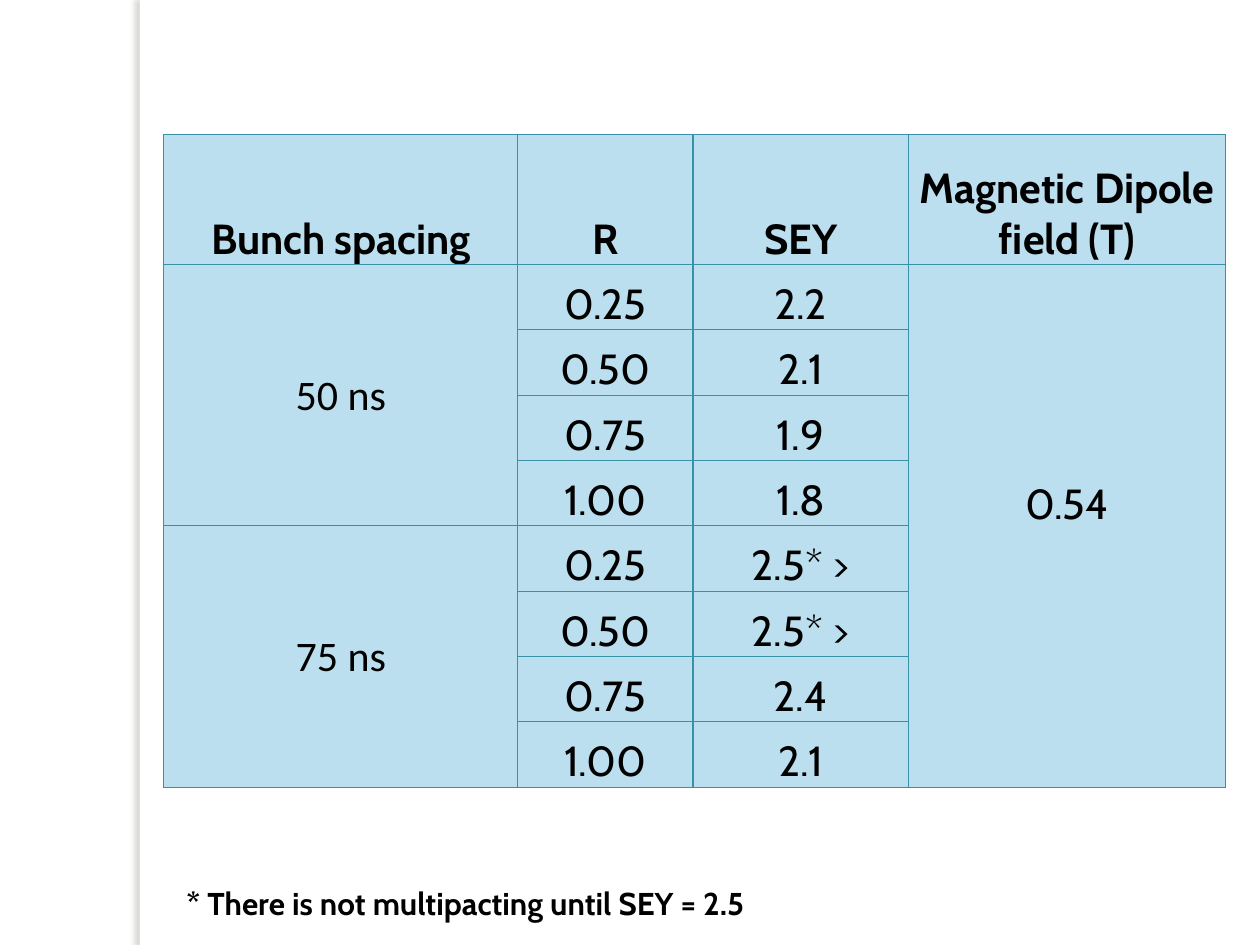
from lxml.etree import SubElement
from pptx import Presentation
from pptx.dml.color import RGBColor
from pptx.enum.shapes import MSO_SHAPE
from pptx.enum.text import MSO_ANCHOR, PP_ALIGN
from pptx.oxml.ns import qn
from pptx.util import Inches, Pt

COLORS = {"paper": "FFFFFF", "shade": "736F63", "cell": "BCDFEF",
          "border": "3891A7", "text": "000000"}
HEADERS = ["Bunch spacing", "R", "SEY", "Magnetic Dipole field (T)"]
RATIOS = ["0.25", "0.50", "0.75", "1.00"]
SEY_BY_SPACING = {"50 ns": ["2.2", "2.1", "1.9", "1.8"],
                  "75 ns": ["2.5* >", "2.5* >", "2.4", "2.1"]}
FIELD = "0.54"
COLUMN_WIDTHS = [2.81, 1.39, 1.71, 2.52]
HEADER_HEIGHT = 1.03


def rgb(name):
    return RGBColor.from_string(COLORS[name])


def style(paragraph, size, bold=False, family="Cabin"):
    font = paragraph.font
    font.name, font.size, font.bold = family, Pt(size), bold
    font.color.rgb = rgb("text")


def add_margin_edge(slide, left, top, width, height):
    """White strip that throws a soft shadow to its left."""
    edge = slide.shapes.add_shape(MSO_SHAPE.RECTANGLE, Inches(left), Inches(top),
                                  Inches(width), Inches(height))
    edge.shadow.inherit = False
    edge.fill.solid()
    edge.fill.fore_color.rgb = rgb("paper")
    edge.line.fill.background()
    effects = edge._element.spPr.find(qn("a:effectLst"))
    shadow = SubElement(effects, qn("a:outerShdw"), blurRad=str(Pt(3)),
                        dist=str(Pt(3)), dir=str(180 * 60000),
                        algn="tl", rotWithShape="0")
    shade = SubElement(shadow, qn("a:srgbClr"), val=COLORS["shade"])
    SubElement(shade, qn("a:alpha"), val="25000")


def frame_cell(cell):
    properties = cell._tc.get_or_add_tcPr()
    for side in ("a:lnL", "a:lnR", "a:lnT", "a:lnB"):
        border = SubElement(properties, qn(side), w=str(Pt(0.75)))
        fill = SubElement(border, qn("a:solidFill"))
        SubElement(fill, qn("a:srgbClr"), val=COLORS["border"])
    cell.fill.solid()
    cell.fill.fore_color.rgb = rgb("cell")
    cell.margin_left = cell.margin_right = cell.margin_top = Inches(0.01)
    cell.margin_bottom = 0
    cell.vertical_anchor = MSO_ANCHOR.BOTTOM


def write_cell(cell, text, **look):
    cell.text = text
    paragraph = cell.text_frame.paragraphs[0]
    paragraph.alignment = PP_ALIGN.CENTER
    style(paragraph, 24, **look)


def write_group(first, last, text, **look):
    first.merge(last)
    write_cell(first, text, **look)
    first.vertical_anchor = MSO_ANCHOR.MIDDLE


def add_yield_table(slide, left, top, width, height):
    group_size = len(RATIOS)
    body_rows = group_size * len(SEY_BY_SPACING)
    table = slide.shapes.add_table(body_rows + 1, len(HEADERS), Inches(left), Inches(top),
                                   Inches(width), Inches(height)).table
    table.horz_banding = False
    for column, share in zip(table.columns, COLUMN_WIDTHS):
        column.width = Inches(width * share / sum(COLUMN_WIDTHS))
    for index, row in enumerate(table.rows):
        row.height = Inches((height - HEADER_HEIGHT) / body_rows if index else HEADER_HEIGHT)
    for cell in table.iter_cells():
        frame_cell(cell)

    for column, header in enumerate(HEADERS):
        write_cell(table.cell(0, column), header, bold=True)
    for group, (spacing, yields) in enumerate(SEY_BY_SPACING.items()):
        start = 1 + group * group_size
        write_group(table.cell(start, 0), table.cell(start + group_size - 1, 0),
                    spacing, family="Calibri")
        for row, (ratio, sey) in enumerate(zip(RATIOS, yields), start):
            write_cell(table.cell(row, 1), ratio)
            write_cell(table.cell(row, 2), sey)
    field = table.cell(1, 3)
    write_group(field, table.cell(body_rows, 3), FIELD)
    field.margin_bottom = Inches(0.35)  # sits a little above the middle


def add_footnote(slide, left, top, width, height):
    frame = slide.shapes.add_textbox(Inches(left), Inches(top),
                                     Inches(width), Inches(height)).text_frame
    frame.word_wrap = True
    frame.text = "* There is not multipacting until SEY = 2.5"
    style(frame.paragraphs[0], 18, bold=True)


def main():
    deck = Presentation()
    deck.slide_width, deck.slide_height = Inches(10), Inches(7.5)
    slide = deck.slides.add_slide(deck.slide_layouts[6])
    slide.background.fill.solid()
    slide.background.fill.fore_color.rgb = rgb("paper")
    add_margin_edge(slide, 1.11, 0, 0.08, 7.5)
    add_yield_table(slide, 1.3, 1.07, 8.43, 5.18)
    add_footnote(slide, 1.38, 6.97, 5.35, 0.4)
    deck.save("out.pptx")


if __name__ == "__main__":
    main()
